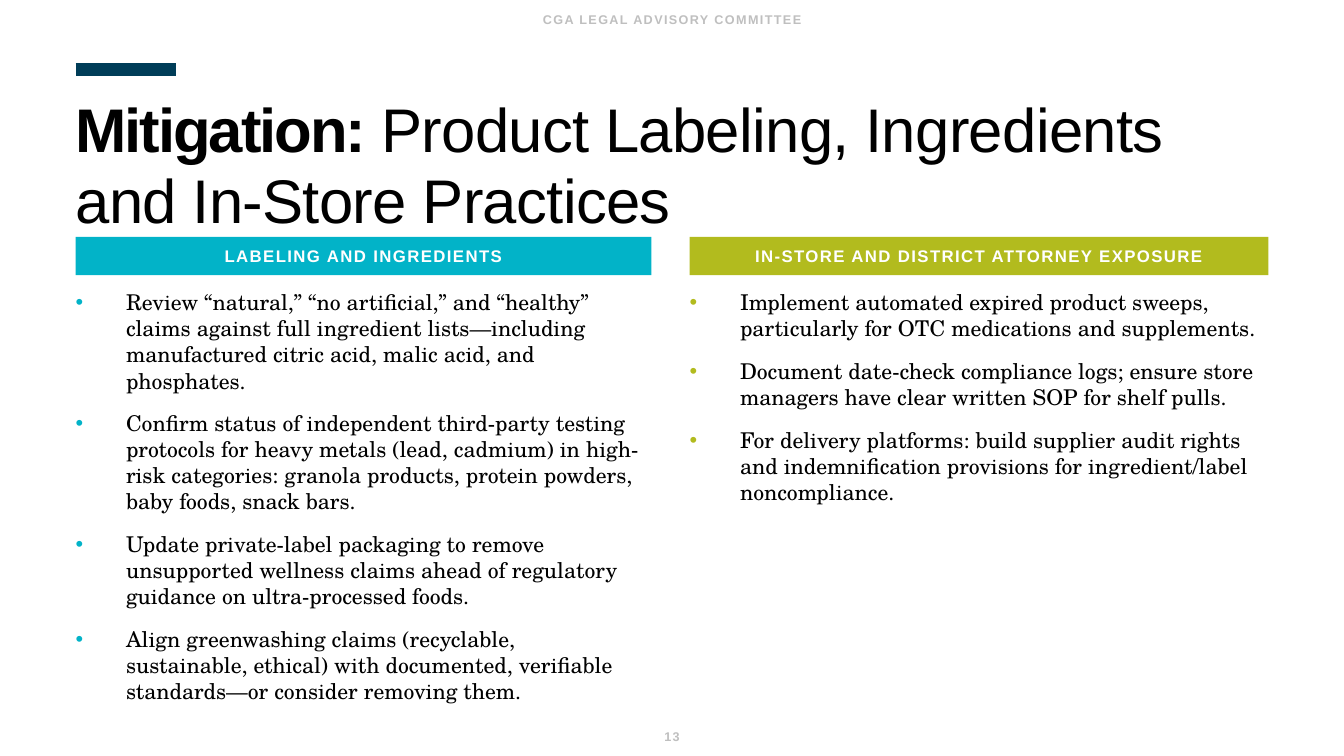
from pptx import Presentation
from pptx.dml.color import RGBColor
from pptx.enum import shapes, text
from pptx.oxml import ns
from pptx import util as u
from lxml import etree

NAVY = RGBColor(0x00, 0x3D, 0x58)
TEAL = RGBColor(0x02, 0xB3, 0xC8)
LIME = RGBColor(0xB2, 0xBB, 0x1E)
GRAY = RGBColor(0xBF, 0xBF, 0xBF)
BLACK = RGBColor(0, 0, 0)
WHITE = RGBColor(0xFF, 0xFF, 0xFF)
SANS, SERIF = "Arial", "TeX Gyre Schola"
WIDTH, LEFT = 13.33, 0.75

COLUMNS = [
    (LEFT, 5.71, TEAL, "LABELING AND INGREDIENTS", [
        "Review “natural,” “no artificial,” and “healthy” claims against full "
        "ingredient lists—including manufactured citric acid, malic acid, and phosphates.",
        "Confirm status of independent third-party testing protocols for heavy metals "
        "(lead, cadmium) in high-risk categories: granola products, protein powders, "
        "baby foods, snack bars.",
        "Update private-label packaging to remove unsupported wellness claims ahead of "
        "regulatory guidance on ultra-processed foods.",
        "Align greenwashing claims (recyclable, sustainable, ethical) with documented, "
        "verifiable standards—or consider removing them.",
    ]),
    (6.84, 5.74, LIME, "IN-STORE AND DISTRICT ATTORNEY EXPOSURE", [
        "Implement automated expired product sweeps, particularly for OTC medications "
        "and supplements.",
        "Document date-check compliance logs; ensure store managers have clear written "
        "SOP for shelf pulls.",
        "For delivery platforms: build supplier audit rights \n"
        "and indemnification provisions for ingredient/label noncompliance.",
    ]),
]


class Deck:
    """Holds the fonts, the presentation and the current slide."""

    def __init__(self):
        self.prs = Presentation()
        self.prs.slide_width = u.Inches(WIDTH)
        self.prs.slide_height = u.Inches(7.5)
        self.slide = self.prs.slides.add_slide(self.prs.slide_layouts[6])

    def run(self, para, words, size, color, font=SANS, bold=False, gap=0):
        """Adds one run; gap is the letter spacing in points."""
        run = para.add_run()
        run.text = words
        run.font.size = u.Pt(size)
        run.font.name = font
        run.font.bold = bold
        run.font.color.rgb = color
        if gap:
            run.font._element.set("spc", str(int(gap * 100)))

    def frame(self, shape, pads, anchor=text.MSO_ANCHOR.TOP):
        """Sets wrapping, anchor and insets; returns the text frame."""
        frame = shape.text_frame
        frame.word_wrap = True
        frame.vertical_anchor = anchor
        (frame.margin_left, frame.margin_top,
         frame.margin_right, frame.margin_bottom) = map(u.Inches, pads)
        return frame

    def box(self, x, y, w, h):
        return self.slide.shapes.add_textbox(*map(u.Inches, (x, y, w, h)))

    def accent(self, x, y, w):
        line = self.slide.shapes.add_connector(
            shapes.MSO_CONNECTOR.STRAIGHT, *map(u.Inches, (x, y, x + w, y)))
        line.line.color.rgb = NAVY
        line.line.width = u.Pt(9)
        etree.SubElement(line._element.spPr, ns.qn("a:effectLst"))

    def title(self, lead, rest):
        frame = self.frame(self.box(LEFT, 0.76, 11.83, 1.49), (0, 0.2, 0, 0))
        para = frame.paragraphs[0]
        para.line_spacing = 0.95
        self.run(para, lead, 44, BLACK, bold=True, gap=-1.5)
        self.run(para, rest, 44, BLACK, gap=-0.5)

    def label(self, shape, words, size, color, pads):
        """Writes one bold, spaced, centred line in a shape."""
        para = self.frame(shape, pads, text.MSO_ANCHOR.MIDDLE).paragraphs[0]
        para.alignment = text.PP_ALIGN.CENTER
        self.run(para, words, size, color, bold=True, gap=1)

    def margin(self, y, words):
        """Places small grey text across the slide's full width."""
        self.label(self.box(0, y, WIDTH, 0.38), words, 9, GRAY, (0.1, 0.05, 0.1, 0.05))

    def header(self, x, w, color, words):
        bar = self.slide.shapes.add_shape(
            shapes.MSO_SHAPE.RECTANGLE, *map(u.Inches, (x, 2.35, w, 0.38)))
        bar.shadow.inherit = False
        bar.fill.solid()
        bar.fill.fore_color.rgb = color
        bar.line.fill.background()
        self.label(bar, words, 12, WHITE, (0, 0.05, 0, 0.05))

    def bullet(self, para, color):
        props = para._p.get_or_add_pPr()
        props.set("marL", str(u.Inches(0.5)))
        props.set("indent", str(u.Inches(-0.5)))
        tint = etree.SubElement(props, ns.qn("a:buClr"))
        etree.SubElement(tint, ns.qn("a:srgbClr"), val=str(color))
        etree.SubElement(props, ns.qn("a:buFont"), typeface=SANS)
        etree.SubElement(props, ns.qn("a:buChar"), char="•")

    def points(self, x, w, color, items):
        frame = self.frame(self.box(x, 2.82, w, 3.92), (0, 0.05, 0.1, 0.05))
        for i, item in enumerate(items):
            para = frame.add_paragraph() if i else frame.paragraphs[0]
            self.bullet(para, color)
            if i:
                para.space_before = u.Pt(12)
            for j, part in enumerate(item.split("\n")):
                if j:
                    para.add_line_break()
                self.run(para, part, 15.5, BLACK, SERIF)


def main():
    deck = Deck()
    deck.accent(LEFT, 0.69, 1)
    deck.title("Mitigation: ", "Product Labeling, Ingredients and In-Store Practices")
    for x, w, color, head, items in COLUMNS:
        deck.header(x, w, color, head)
        deck.points(x, w, color, items)
    deck.margin(0, "CGA LEGAL ADVISORY COMMITTEE")
    deck.margin(7.12, "13")
    deck.prs.save("out.pptx")


if __name__ == "__main__":
    main()
